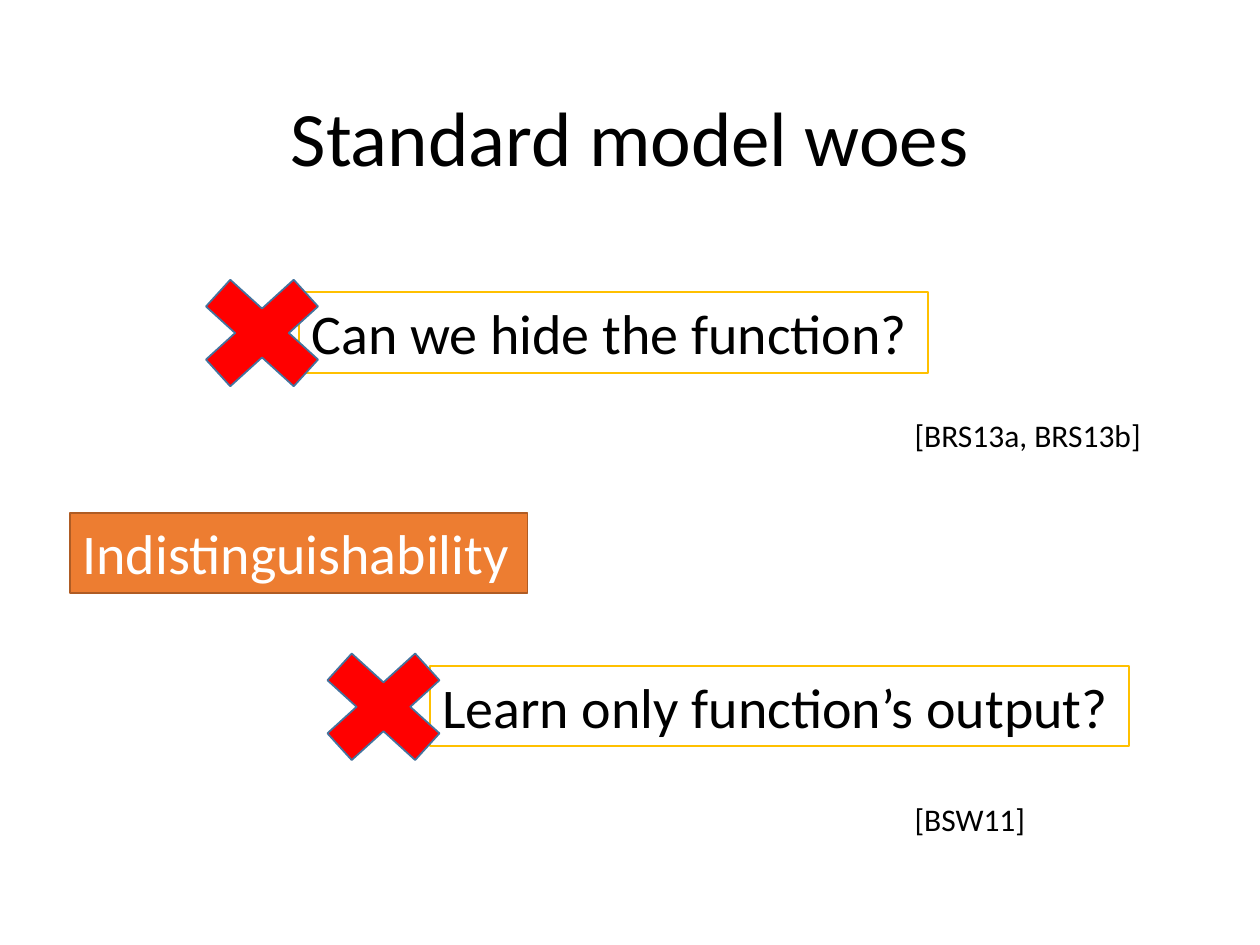
from dataclasses import dataclass

from pptx import Presentation
from pptx.dml.color import RGBColor
from pptx.enum.shapes import MSO_SHAPE as Shape
from pptx.enum.text import MSO_ANCHOR as Anchor, MSO_AUTO_SIZE as AutoSize, PP_ALIGN as Align
from pptx.util import Pt

FONT = "Calibri"
BLACK, WHITE = "000000", "FFFFFF"
RED, BLUE = "FF0000", "43739E"
ORANGE, BROWN, GOLD = "ED7D31", "AF5C24", "FFC000"
BOX_HEIGHT = 46
CITATION_LEFT = 515.5
CROSS_WIDTH, CROSS_HEIGHT = 96.5, 87.8


@dataclass
class Box:
    text: str
    left: float
    top: float
    width: float
    fill: str = WHITE
    line: str = GOLD
    color: str = BLACK


@dataclass
class Cross:
    left: float
    top: float


@dataclass
class Citation:
    text: str
    top: float
    width: float


NOTION = Box("Indistinguishability", 40, 293, 261.5, ORANGE, BROWN, WHITE)
QUESTIONS = [
    (Box("Learn only function’s output?", 245.5, 380.5, 399.6), Cross(170.9, 360)),
    (Box("Can we hide the function?", 170.9, 167, 359.3), Cross(101.5, 146.4)),
]
CITATIONS = [
    Citation("[BRS13a, BRS13b]", 234, 145.4),
    Citation("[BSW11]", 453.7, 78.5),
]


def rgb(color: str) -> RGBColor:
    return RGBColor.from_string(color)


def write(frame, text: str, size: float, color: str, align=Align.LEFT) -> None:
    frame.text = text
    paragraph = frame.paragraphs[0]
    paragraph.alignment = align
    font = paragraph.runs[0].font
    font.name, font.size = FONT, Pt(size)
    font.color.rgb = rgb(color)


def fit_to_text(frame) -> None:
    """Keep the text on one line and let its shape grow with it."""
    frame.word_wrap = False
    frame.auto_size = AutoSize.SHAPE_TO_FIT_TEXT


def add_filled(slide, preset, left: float, top: float, width: float, height: float,
               fill: str, line: str):
    shape = slide.shapes.add_shape(preset, Pt(left), Pt(top), Pt(width), Pt(height))
    shape.shadow.inherit = False
    shape.fill.solid()
    shape.fill.fore_color.rgb = rgb(fill)
    shape.line.color.rgb = rgb(line)
    shape.line.width = Pt(1)
    return shape


def add_box(slide, box: Box) -> None:
    shape = add_filled(slide, Shape.RECTANGLE, box.left, box.top, box.width, BOX_HEIGHT,
                       box.fill, box.line)
    frame = shape.text_frame
    write(frame, box.text, 32, box.color)
    frame.vertical_anchor = Anchor.TOP
    fit_to_text(frame)


def add_cross(slide, cross: Cross) -> None:
    add_filled(slide, Shape.MATH_MULTIPLY, cross.left, cross.top,
               CROSS_WIDTH, CROSS_HEIGHT, RED, BLUE)


def add_citation(slide, citation: Citation) -> None:
    frame = slide.shapes.add_textbox(Pt(CITATION_LEFT), Pt(citation.top),
                                     Pt(citation.width), Pt(29)).text_frame
    write(frame, citation.text, 18, BLACK)
    fit_to_text(frame)


def set_title(slide, text: str) -> None:
    title = slide.shapes.title
    title.left, title.top, title.width, title.height = Pt(49.5), Pt(28.8), Pt(621), Pt(104.4)
    write(title.text_frame, text, 44, BLACK, Align.CENTER)
    title.text_frame.vertical_anchor = Anchor.MIDDLE
    title.text_frame.paragraphs[0].line_spacing = 0.9


def main() -> None:
    deck = Presentation()
    deck.slide_width, deck.slide_height = Pt(720), Pt(540)
    slide = deck.slides.add_slide(deck.slide_layouts[5])
    set_title(slide, "Standard model woes")
    add_box(slide, NOTION)
    for question, cross in QUESTIONS:
        add_box(slide, question)
        add_cross(slide, cross)
    for citation in CITATIONS:
        add_citation(slide, citation)
    deck.save("out.pptx")


if __name__ == "__main__":
    main()
